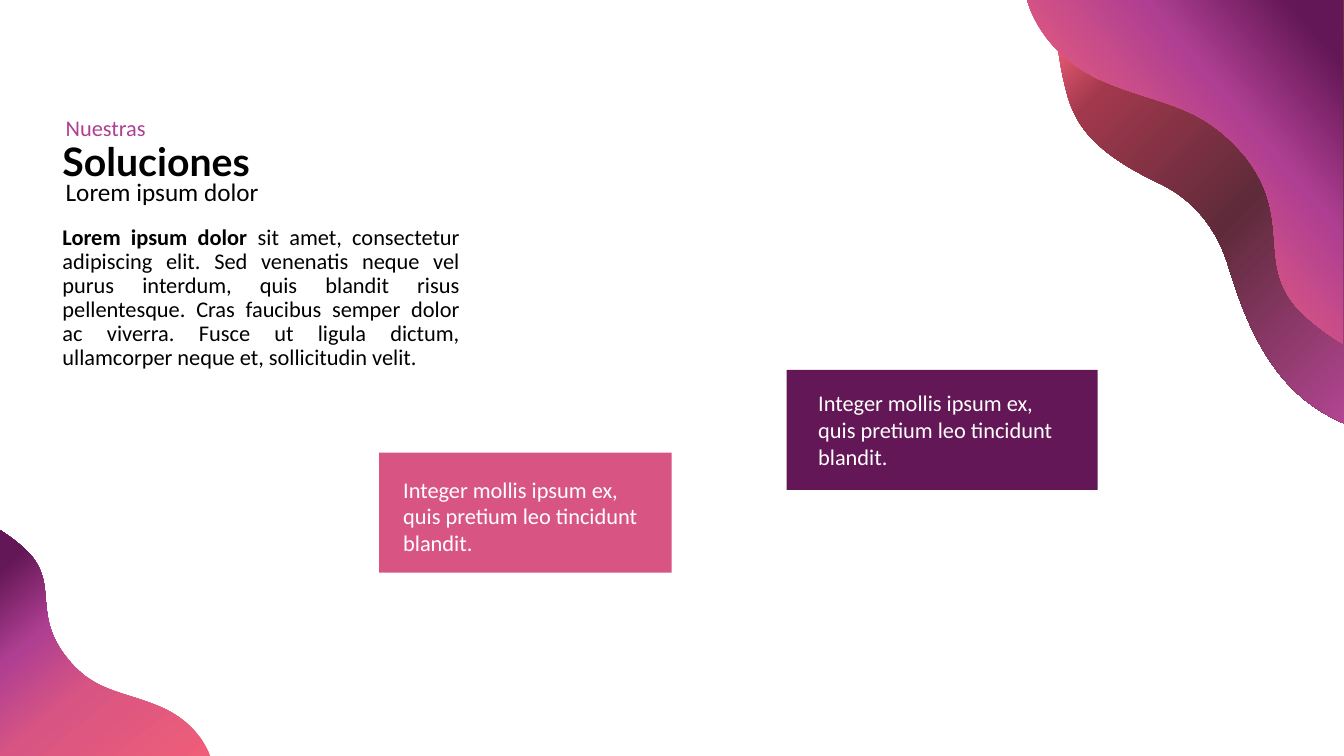
from lxml.etree import SubElement
from pptx import Presentation
from pptx.dml.color import RGBColor
from pptx.enum.shapes import MSO_SHAPE
from pptx.enum.text import MSO_ANCHOR, MSO_AUTO_SIZE, PP_ALIGN
from pptx.oxml.ns import qn
from pptx.util import Inches, Pt

WIDTH, HEIGHT = Inches(13.33), Inches(7.5)
BLACK, WHITE = RGBColor(0, 0, 0), RGBColor(255, 255, 255)
PINK = RGBColor(0xD8, 0x55, 0x83)
ORCHID = RGBColor(0xAF, 0x3F, 0x92)
PLUM = RGBColor(0x63, 0x17, 0x56)
CORAL = RGBColor(0xF1, 0x5E, 0x78)
MAGENTA = RGBColor(0xB2, 0x45, 0x92)
MAROON = RGBColor(0x5F, 0x2B, 0x3A)
CRIMSON = RGBColor(0xA2, 0x38, 0x4D)
SALMON = RGBColor(0xF1, 0x5F, 0x79)

BRIGHT = [(0, CORAL), (44, PINK), (67, ORCHID), (91, PLUM)]
DEEP = [(0, MAGENTA), (44, MAROON), (80, CRIMSON), (94, SALMON)]

LOWER_WAVE = [
    (15.83, 101.07), (15.83, 101.07), (15.3, 95.87), (11.7, 93.33),
    (8.93, 91.33), (6.9, 91.47), (4.88, 86.8),
    (2.33, 80.93), (4.5, 77.07), (1.88, 72.67),
    (0.9, 71.07), (0, 70.13), (0, 70.13)]
BACK_WAVE = [
    (78.54, -0.27), (78.54, -0.27), (78.32, 5.33), (79.37, 12.27),
    (79.97, 16.27), (81.25, 20), (86.12, 24.13),
    (89.05, 26.53), (90.55, 30.67), (91.3, 34.67),
    (92.72, 42.93), (94.67, 52), (100, 56)]
FRONT_WAVE = [
    (76.37, -0.4), (76.37, -0.4), (77.19, 7.33), (82.52, 11.07),
    (86.65, 14), (89.42, 13.87), (92.65, 20.67),
    (96.47, 29.33), (93.17, 35.33), (97.07, 41.73),
    (98.57, 44.13), (99.92, 45.47), (99.92, 45.47)]


def place(x, y):
    """Turn percentages of the slide's width and height into lengths."""
    return round(WIDTH * x / 100), round(HEIGHT * y / 100)


def box(left, top, width, height):
    """Return the position and size of a box given in percentages."""
    return *place(left, top), *place(width, height)


def move(holder, area):
    """Move a placeholder to an area given in percentages."""
    holder.left, holder.top, holder.width, holder.height = box(*area)


def add_run(paragraph, wording, size, color, font="Calibri", bold=False):
    """Add one formatted run to a paragraph."""
    run = paragraph.add_run()
    run.text = wording
    run.font.name, run.font.size, run.font.bold = font, Pt(size), bold
    run.font.color.rgb = color


def add_label(slide, area, wording, size, color, wrap=False):
    """Add a text box holding one run."""
    frame = slide.shapes.add_textbox(*box(*area)).text_frame
    frame.word_wrap = wrap
    frame.auto_size = MSO_AUTO_SIZE.SHAPE_TO_FIT_TEXT
    add_run(frame.paragraphs[0], wording, size, color)


def add_panel(slide, area, color):
    """Add a plain coloured rectangle."""
    panel = slide.shapes.add_shape(MSO_SHAPE.RECTANGLE, *box(*area))
    panel.shadow.inherit = False
    panel.fill.solid()
    panel.fill.fore_color.rgb = color
    panel.line.fill.background()


def bend(shape, curve_count):
    """Join each three of the first segments of a freeform into a cubic curve."""
    segments = list(shape._element.iter(qn("a:lnTo")))
    for index in range(0, 3 * curve_count, 3):
        trio = segments[index:index + 3]
        trio[0].tag
        cubic = trio[0].getparent().makeelement(qn("a:cubicBezTo"))
        trio[0].addprevious(cubic)
        for segment in trio:
            cubic.append(segment[0])
            segment.getparent().remove(segment)


def paint_gradient(shape, stops, angle):
    """Fill a shape with colour stops, linear or, without angle, from its lower right."""
    shape.fill.gradient()
    gradient = shape._element.spPr.find(qn("a:gradFill"))
    for child in list(gradient):
        gradient.remove(child)
    stop_list = SubElement(gradient, qn("a:gsLst"))
    for position, color in stops:
        stop = SubElement(stop_list, qn("a:gs"), pos=str(position * 1000))
        SubElement(stop, qn("a:srgbClr"), val=str(color))
    if angle is None:
        focus = SubElement(gradient, qn("a:path"), path="circle")
        SubElement(focus, qn("a:fillToRect"), l="100000", t="100000")
    else:
        SubElement(gradient, qn("a:lin"), ang=str(angle * 60000), scaled="0")


def add_wave(slide, curve, corner, stops, angle=None):
    """Add a wavy corner ornament closed through the given corner."""
    builder = slide.shapes.build_freeform(*place(*curve[0]))
    builder.add_line_segments([place(*point) for point in curve[1:] + [corner]])
    wave = builder.convert_to_shape()
    bend(wave, len(curve) // 3)
    wave.shadow.inherit = False
    wave.line.fill.background()
    paint_gradient(wave, stops, angle)


def write_title(title):
    """Write the heading into the title placeholder."""
    move(title, (3.9, 17.47, 29.71, 7.6))
    title.text_frame.vertical_anchor = MSO_ANCHOR.MIDDLE
    heading = title.text_frame.paragraphs[0]
    heading.alignment = PP_ALIGN.LEFT
    add_run(heading, "Soluciones", 28, BLACK, "Lato", True)


def write_body(body):
    """Write the justified introduction into the body placeholder."""
    move(body, (3.9, 29.2, 31.06, 43.33))
    introduction = body.text_frame.paragraphs[0]
    introduction.alignment = PP_ALIGN.JUSTIFY
    introduction.line_spacing = 0.9
    introduction.space_before = Pt(10)
    properties = introduction._p.get_or_add_pPr()
    properties.set("marL", "0")
    properties.set("indent", "0")
    SubElement(properties, qn("a:buNone"))
    add_run(introduction, "Lorem ipsum dolor ", 16, BLACK, bold=True)
    add_run(introduction,
            "sit amet, consectetur adipiscing elit. Sed venenatis neque vel "
            "purus interdum, quis blandit risus pellentesque. Cras faucibus "
            "semper dolor ac viverra. Fusce ut ligula dictum, ullamcorper "
            "neque et, sollicitudin velit.", 16, BLACK)


def main():
    """Build the solutions slide and save it."""
    deck = Presentation()
    deck.slide_width, deck.slide_height = WIDTH, HEIGHT
    slide = deck.slides.add_slide(deck.slide_layouts[1])
    write_title(slide.shapes.title)
    write_body(slide.placeholders[1])
    add_label(slide, (4.15, 14.4, 7.58, 4.93), "Nuestras", 16, ORCHID)
    add_label(slide, (4.15, 22.67, 16.73, 5.33), "Lorem ipsum dolor", 18, BLACK)

    solutions = [
        ((28.21, 59.87, 21.76, 15.87), PINK, (29.26, 62.27, 19.95, 12.13)),
        ((58.53, 48.93, 23.15, 15.87), PLUM, (60.14, 50.8, 19.95, 12.13))]
    for panel_area, color, label_area in solutions:
        add_panel(slide, panel_area, color)
        add_label(slide, label_area,
                  "Integer mollis ipsum ex, quis pretium leo tincidunt blandit.",
                  16, WHITE, wrap=True)

    add_wave(slide, LOWER_WAVE, (0, 101.07), BRIGHT, 230)
    add_wave(slide, BACK_WAVE, (100, -0.4), DEEP)
    add_wave(slide, FRONT_WAVE, (99.92, -0.4), BRIGHT, 320)
    deck.save("out.pptx")


if __name__ == "__main__":
    main()
